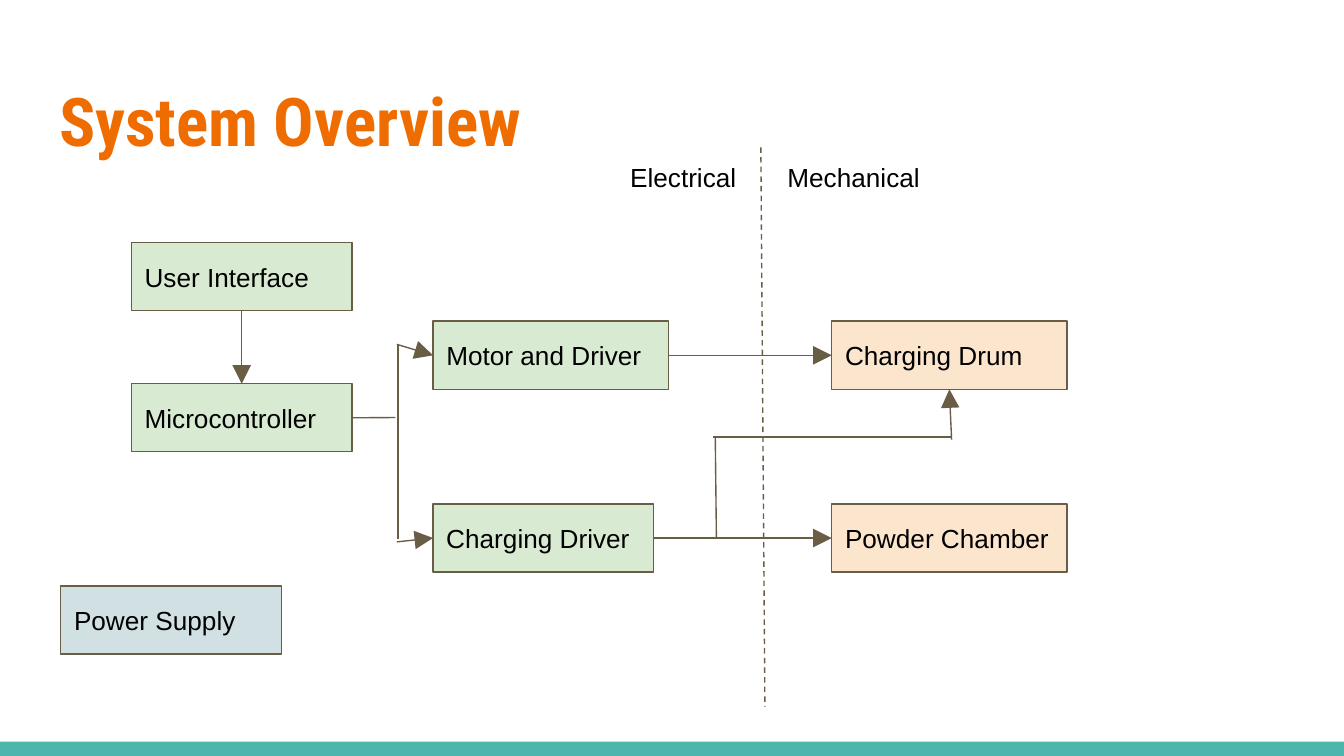
from lxml.etree import SubElement
from pptx import Presentation
from pptx.dml.color import RGBColor
from pptx.enum.dml import MSO_LINE
from pptx.enum.shapes import MSO_CONNECTOR, MSO_SHAPE
from pptx.enum.text import MSO_ANCHOR, PP_ALIGN
from pptx.oxml.ns import qn
from pptx.util import Pt

WIDTH, HEIGHT = 720, 405
INK, BROWN, ORANGE, TEAL = "000000", "695D46", "EF6C00", "4DB6AC"
GREEN, PEACH, BLUE = "D9EAD3", "FCE5CD", "D0E0E3"

TITLE = "System Overview"
SIDE_LABELS = [("Electrical", 330.5), ("Mechanical", 414.7)]

# Block: left, top, width, fill
BLOCK_HEIGHT = 36.5
NARROW, WIDE = 118.2, 126
CONTROL_X, DRIVER_X, OUTPUT_X = 70.4, 232, 445.6
MOTOR_Y, CHARGING_Y = 172.1, 270
BLOCKS = {
    "User Interface": (CONTROL_X, 130, NARROW, GREEN),
    "Microcontroller": (CONTROL_X, 205.6, NARROW, GREEN),
    "Charging Driver": (DRIVER_X, CHARGING_Y, NARROW, GREEN),
    "Motor and Driver": (DRIVER_X, MOTOR_Y, WIDE, GREEN),
    "Charging Drum": (OUTPUT_X, MOTOR_Y, WIDE, PEACH),
    "Powder Chamber": (OUTPUT_X, CHARGING_Y, WIDE, PEACH),
    "Power Supply": (32.6, 314, NARROW, BLUE),
}

# An end is a point or a (block, side) pair
TOP, LEFT, BOTTOM, RIGHT = range(4)
DIVIDER = ((407.6, 79), (409.8, 378.6))
PLAIN_LINES = [
    (("Microcontroller", RIGHT), (211.8, 223.7)),
    ((213.2, 288.8), (213.2, 184.8)),
    ((510, 234.2), (382, 234.2)),
    ((383.2, 234.2), (383.8, 288)),
]
ARROWS = [
    (("User Interface", BOTTOM), ("Microcontroller", TOP)),
    ((212.6, 184.5), ("Motor and Driver", LEFT)),
    ((212.6, 290.3), ("Charging Driver", LEFT)),
    (("Charging Driver", RIGHT), ("Powder Chamber", LEFT)),
    (("Motor and Driver", RIGHT), ("Charging Drum", LEFT)),
    ((509.8, 235.5), ("Charging Drum", BOTTOM)),
]

BODY = {"name": "Arial", "size": Pt(14), "bold": False}
HEADING = {"name": "Roboto Condensed", "size": Pt(36), "bold": True}


def rgb(value):
    return RGBColor.from_string(value)


def set_all(target, values):
    for name, value in values.items():
        setattr(target, name, value)


def write(shape, text, style, color, anchor):
    frame = shape.text_frame
    frame.text = text
    margins = {f"margin_{side}": Pt(7.2) for side in ("left", "top", "right", "bottom")}
    set_all(frame, {"word_wrap": True, "vertical_anchor": anchor, **margins})
    paragraph = frame.paragraphs[0]
    paragraph.alignment = PP_ALIGN.LEFT
    set_all(paragraph.font, style)
    paragraph.font.color.rgb = rgb(color)


def add_rectangle(left, top, width, height, fill):
    shape = slide.shapes.add_shape(
        MSO_SHAPE.RECTANGLE, Pt(left), Pt(top), Pt(width), Pt(height))
    shape.shadow.inherit = False
    shape.fill.solid()
    shape.fill.fore_color.rgb = rgb(fill)
    return shape


def add_line(start, end, arrow=False):
    points = [(0, 0) if isinstance(stop[0], str) else stop for stop in (start, end)]
    line = slide.shapes.add_connector(
        MSO_CONNECTOR.STRAIGHT, *(Pt(value) for point in points for value in point))
    for stop, attach in ((start, line.begin_connect), (end, line.end_connect)):
        if isinstance(stop[0], str):
            attach(blocks[stop[0]], stop[1])
    line.line.color.rgb = rgb(BROWN)
    line.line.width = Pt(0.75)
    if arrow:
        SubElement(line.line._get_or_add_ln(), qn("a:tailEnd"),
                   type="triangle", w="lg", len="lg")
    SubElement(line._element.spPr, qn("a:effectLst"))
    return line


deck = Presentation()
deck.slide_width, deck.slide_height = Pt(WIDTH), Pt(HEIGHT)
slide = deck.slides.add_slide(deck.slide_layouts[5])

title = slide.shapes.title
set_all(title, {"left": Pt(24.5), "top": Pt(35.3), "width": Pt(671), "height": Pt(55.4)})
write(title, TITLE, HEADING, ORANGE, MSO_ANCHOR.TOP)

footer_bar = add_rectangle(0, 397.4, WIDTH, HEIGHT - 397.4, TEAL)
footer_bar.line.fill.background()

blocks = {}
for name, (left, top, width, fill) in BLOCKS.items():
    block = add_rectangle(left, top, width, BLOCK_HEIGHT, fill)
    block.line.color.rgb = rgb(BROWN)
    block.line.width = Pt(0.75)
    write(block, name, BODY, INK, MSO_ANCHOR.MIDDLE)
    blocks[name] = block

for label, left in SIDE_LABELS:
    box = slide.shapes.add_textbox(Pt(left), Pt(79.2), Pt(131), Pt(21.6))
    write(box, label, BODY, INK, MSO_ANCHOR.TOP)

add_line(*DIVIDER).line.dash_style = MSO_LINE.DASH
for ends in PLAIN_LINES:
    add_line(*ends)
for ends in ARROWS:
    add_line(*ends, arrow=True)

deck.save("out.pptx")
